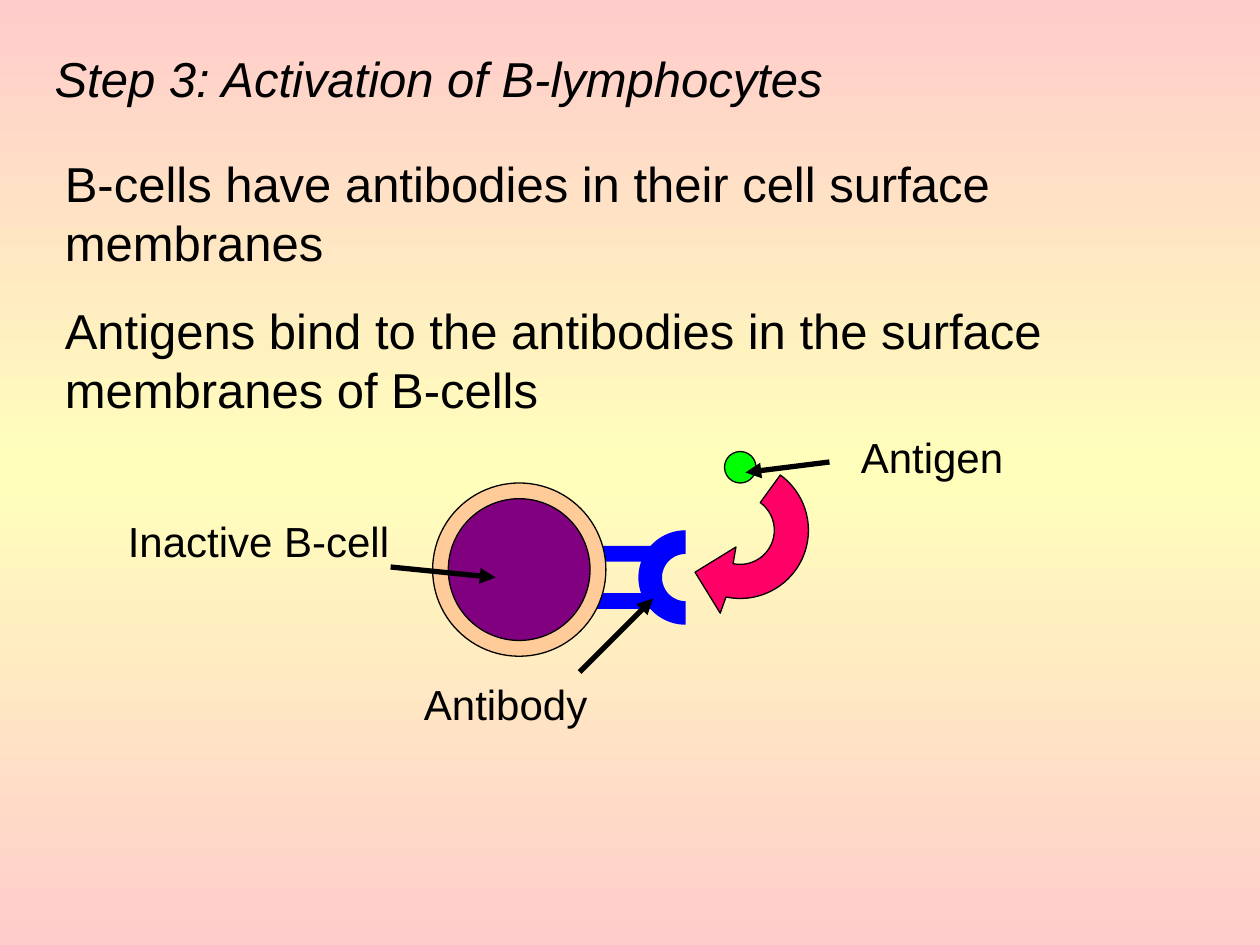
from copy import deepcopy
from dataclasses import dataclass
from math import cos, radians, sin

from lxml import etree
from pptx import Presentation
from pptx.dml.color import RGBColor
from pptx.enum.shapes import MSO_CONNECTOR, MSO_SHAPE
from pptx.enum.text import MSO_ANCHOR, MSO_AUTO_SIZE, PP_ALIGN
from pptx.oxml.ns import qn
from pptx.util import Inches, Pt

OVAL, RECT, ARC = MSO_SHAPE.OVAL, MSO_SHAPE.RECTANGLE, MSO_SHAPE.BLOCK_ARC
STRAIGHT = MSO_CONNECTOR.STRAIGHT
LEFT, TOP, NO_FIT = PP_ALIGN.LEFT, MSO_ANCHOR.TOP, MSO_AUTO_SIZE.NONE
COLS, ROWS = 120, 90


@dataclass(frozen=True)
class Theme:
    """Holds the font, type sizes, line widths and colours."""

    font: str = "Arial"
    body: int = 28
    label: int = 24
    outline: float = 0.75
    pointer: float = 3
    ink: str = "000000"
    edge: str = "FFCCCC"
    middle: str = "FFFFBB"
    antibody: str = "0000FF"
    cell: str = "FFCC99"
    nucleus: str = "800080"
    antigen: str = "00FF00"
    motion: str = "FF0066"


class Deck:
    """Draws themed elements on the current slide, on a 120 by 90 grid."""

    def __init__(self, theme):
        self.prs = Presentation()
        self.prs.slide_width, self.prs.slide_height = Inches(10), Inches(7.5)
        self.t = theme
        self.s = None

    def x(self, col):
        return round(self.prs.slide_width * col / COLS)

    def y(self, row):
        return round(self.prs.slide_height * row / ROWS)

    def box(self, col, row, w, h):
        return self.x(col), self.y(row), self.x(w), self.y(h)

    def slide(self):
        self.s = self.prs.slides.add_slide(self.prs.slide_layouts[5])
        fill = self.s.background.fill
        fill.gradient()
        fill.gradient_angle = 90
        stops = self.s.element.find(".//" + qn("a:gsLst"))
        stops.insert(1, deepcopy(stops[0]))
        colors = (self.t.edge, self.t.middle, self.t.edge)
        for i, (stop, color) in enumerate(zip(fill.gradient_stops, colors)):
            stop.position = i / 2
            stop.color.rgb = RGBColor.from_string(color)

    def set_text(self, sp, text, size, wrap=True, italic=False):
        tf = sp.text_frame
        tf.word_wrap, tf.auto_size, tf.vertical_anchor = wrap, NO_FIT, TOP
        p = tf.paragraphs[0]
        p.alignment = LEFT
        r = p.add_run()
        r.text = text
        r.font.name, r.font.size, r.font.italic = self.t.font, Pt(size), italic
        r.font.color.rgb = RGBColor.from_string(self.t.ink)

    def title(self, text, *box):
        sp = self.s.shapes.title
        sp.left, sp.top, sp.width, sp.height = self.box(*box)
        self.set_text(sp, text, self.t.body, italic=True)

    def text(self, text, *box):
        self.set_text(self.s.shapes.add_textbox(*self.box(*box)), text, self.t.body)

    def label(self, text, *box):
        sp = self.s.shapes.add_textbox(*self.box(*box))
        self.set_text(sp, text, self.t.label, wrap=False)

    def paint(self, sp, color, outlined):
        sp.shadow.inherit = False
        sp.fill.solid()
        sp.fill.fore_color.rgb = RGBColor.from_string(color)
        if outlined:
            sp.line.color.rgb = RGBColor.from_string(self.t.ink)
            sp.line.width = Pt(self.t.outline)
        else:
            sp.line.fill.background()

    def shape(self, kind, color, *box, outlined=True, rotation=0):
        sp = self.s.shapes.add_shape(kind, *self.box(*box))
        sp.rotation = rotation
        self.paint(sp, color, outlined)

    def outline(self, points, color):
        pts = [(self.x(col), self.y(row)) for col, row in points]
        fb = self.s.shapes.build_freeform(*pts[0])
        fb.add_line_segments(pts[1:], close=True)
        self.paint(fb.convert_to_shape(), color, True)

    def pointer(self, start, end):
        sp = self.s.shapes.add_connector(
            STRAIGHT, self.x(start[0]), self.y(start[1]), self.x(end[0]), self.y(end[1]))
        sp.line.color.rgb = RGBColor.from_string(self.t.ink)
        sp.line.width = Pt(self.t.pointer)
        props = sp.element.find(qn("p:spPr"))
        etree.SubElement(props.find(qn("a:ln")), qn("a:tailEnd"), type="triangle")
        etree.SubElement(props, qn("a:effectLst"))


def arc(center, radius, angles):
    """Return the points of a circle at the given angles in degrees."""
    return [(center[0] + radius * cos(radians(a)), center[1] + radius * sin(radians(a)))
            for a in angles]


def main():
    """Build the B-lymphocyte activation slide."""
    t = Theme()
    deck = Deck(t)
    deck.slide()
    deck.title("Step 3: Activation of B-lymphocytes", 4, 4, 90, 6.8)
    deck.text("B-cells have antibodies in their cell surface membranes", 5, 14, 111, 12.4)

    deck.shape(ARC, t.antibody, 60.8, 50.5, 9, 9, outlined=False, rotation=270)
    for row in (56.5, 52):
        deck.shape(RECT, t.antibody, 54.8, row, 7.5, 1.5, outlined=False)
    deck.shape(OVAL, t.cell, 41.2, 46, 16.5, 16.5)
    deck.shape(OVAL, t.nucleus, 42.7, 47.5, 13.5, 13.5)
    deck.label("Inactive B-cell", 11, 48.5, 27.4, 6)
    deck.pointer((37.2, 54), (47.2, 55))
    deck.label("Antibody", 39.2, 64, 18, 6)
    deck.pointer((55.2, 64), (62.2, 57))

    deck.text("Antigens bind to the antibodies in the surface membranes of B-cells",
              5, 28, 111, 12.4)
    deck.shape(OVAL, t.antigen, 69, 43, 3, 3)
    center, sweep = (70.5, 50.5), range(-54, 104, 3)
    head = [(68.6, 58.4), (66.2, 54.5), (70.1, 52.1)]
    deck.outline(arc(center, 6.5, sweep) + head + arc(center, 3.25, reversed(sweep)),
                 t.motion)
    deck.label("Antigen", 80.8, 40.5, 16, 6)
    deck.pointer((79, 44), (71, 45))
    deck.prs.save("out.pptx")


if __name__ == "__main__":
    main()
